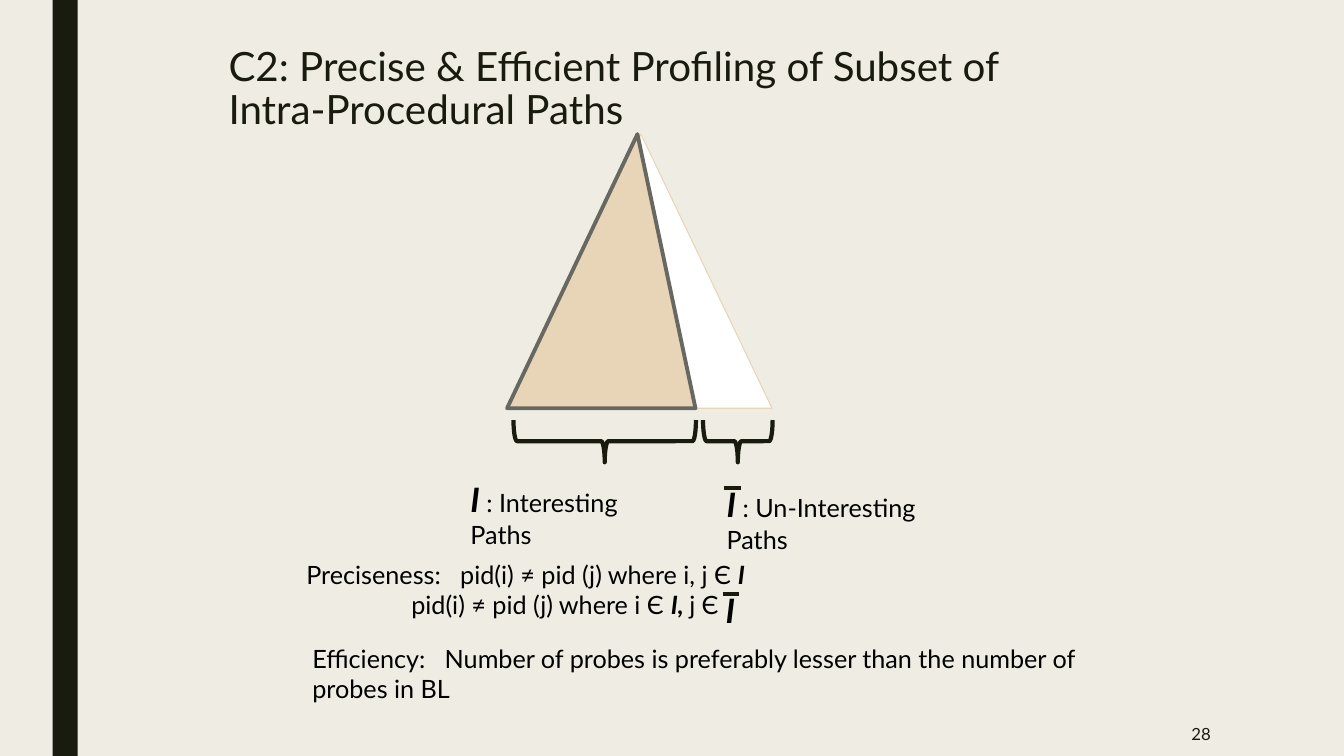
from lxml import etree
from pptx import Presentation
from pptx.dml.color import RGBColor
from pptx.enum.shapes import MSO_CONNECTOR, MSO_SHAPE
from pptx.enum.text import MSO_ANCHOR, PP_ALIGN
from pptx.oxml.ns import qn
from pptx.util import Pt

STRAIGHT = MSO_CONNECTOR.STRAIGHT
RECTANGLE = MSO_SHAPE.RECTANGLE
TRIANGLE = MSO_SHAPE.ISOSCELES_TRIANGLE
LEFT_BRACE = MSO_SHAPE.LEFT_BRACE
MIDDLE = MSO_ANCHOR.MIDDLE
RIGHT = PP_ALIGN.RIGHT

CREAM = RGBColor(0xEF, 0xED, 0xE3)
DARK = RGBColor(0x19, 0x1B, 0x0E)
BLACK = RGBColor(0, 0, 0)
WHITE = RGBColor(0xFF, 0xFF, 0xFF)
TAN = RGBColor(0xE8, 0xD4, 0xB6)
GRAY = RGBColor(0x68, 0x68, 0x63)

FONT = "Lato"
BODY_SIZE = 18
SET_SIZE = 24


def add_shape(shapes, kind, box, fill=None, line=None, weight=0):
    shape = shapes.add_shape(kind, *map(Pt, box))
    shape.shadow.inherit = False
    if fill is None:
        shape.fill.background()
    else:
        shape.fill.solid()
        shape.fill.fore_color.rgb = fill
    if line is None:
        shape.line.fill.background()
    else:
        shape.line.color.rgb = line
        shape.line.width = Pt(weight)
    return shape


def add_text(slide, box, lines, size=BODY_SIZE, color=BLACK, set_size=BODY_SIZE):
    """Each line is a list of (text, is_set_symbol) runs."""
    frame = slide.shapes.add_textbox(*map(Pt, box)).text_frame
    frame.word_wrap = True
    for index, runs in enumerate(lines):
        paragraph = frame.add_paragraph() if index else frame.paragraphs[0]
        paragraph.font.name = FONT
        paragraph.font.size = Pt(size)
        paragraph.font.color.rgb = color
        for text, is_set_symbol in runs:
            run = paragraph.add_run()
            run.text = text
            if is_set_symbol:
                run.font.bold = run.font.italic = True
                run.font.size = Pt(set_size)
    return frame


def add_overline(slide, left, top):
    """Complement bar over the set symbol of a text box at left, top."""
    bar_left, bar_top = left + 5, top + 6.75
    bar = slide.shapes.add_connector(
        STRAIGHT, Pt(bar_left), Pt(bar_top), Pt(bar_left + 12), Pt(bar_top))
    bar.line.color.rgb = DARK
    bar.line.width = Pt(3)
    etree.SubElement(bar._element.spPr, qn("a:effectLst"))


def add_frame(slide, width, height):
    slide.background.fill.solid()
    slide.background.fill.fore_color.rgb = CREAM
    add_shape(slide.shapes, RECTANGLE, (37.5, 0, 18, height), DARK)
    # Page number
    number = add_text(slide, (width - 214, height - 31.5, 126, 31.5),
                      [[("28", False)]], 12, DARK)
    number.vertical_anchor = MIDDLE
    number.paragraphs[0].alignment = RIGHT


def add_title(slide, left, top, width, height):
    title = "C2: Precise & Efficient Profiling of Subset of \vIntra-Procedural Paths"
    frame = add_text(slide, (left, top, width, height), [], 28.8, DARK)
    paragraph = frame.paragraphs[0]
    paragraph.text = title
    paragraph.line_spacing = 0.89
    paragraph.font.name = FONT
    paragraph.font.size = Pt(28.8)
    paragraph.font.color.rgb = DARK


def add_path_triangles(slide, left, top, width, height):
    group = slide.shapes.add_group_shape()
    add_shape(group.shapes, TRIANGLE, (left + 2, top, width - 2, height),
              WHITE, TAN, 0.75)
    interesting = add_shape(group.shapes, TRIANGLE, (left, top, 134.6, height),
                            TAN, GRAY, 2.75)
    interesting.adjustments[0] = 0.692


def add_brace(slide, left, top, width, height):
    """Brace opening upward; the unrotated shape shares the box's centre."""
    center_x, center_y = left + width / 2, top + height / 2
    box = (center_x - height / 2, center_y - width / 2, height, width)
    brace = add_shape(slide.shapes, LEFT_BRACE, box, line=DARK, weight=3)
    brace.rotation = 270


def add_set_label(slide, left, top, width, text, complement=False):
    frame = add_text(slide, (left, top, width, 36),
                     [[("I", True), (text, False)]], set_size=SET_SIZE)
    frame.margin_right = Pt(24)
    if complement:
        add_overline(slide, left, top)


def add_preciseness(slide, left, top, width, height):
    frame = add_text(slide, (left, top, width, height), [
        [("Preciseness:   pid(i) ≠ pid (j) where i, j Є ", False), ("I", True)],
        [("pid(i) ≠ pid (j) where i Є ", False), ("I, ", True), ("j Є", False)],
    ])
    second_line = frame.paragraphs[1]._p.get_or_add_pPr()
    second_line.set("marL", str(Pt(75)))
    second_line.set("indent", "0")
    # Complement symbol that closes the second line
    symbol_left, symbol_top = left + 299.5, top + 21.6
    add_text(slide, (symbol_left, symbol_top, 25, 36), [[("I", True)]],
             set_size=SET_SIZE)
    add_overline(slide, symbol_left, symbol_top)


def add_efficiency(slide, left, top, width, height):
    add_text(slide, (left, top, width, height), [[(
        "Efficiency:   Number of probes is preferably lesser than the number "
        "of probes in BL", False)]])


def main():
    presentation = Presentation()
    presentation.slide_width, presentation.slide_height = Pt(960), Pt(540)
    slide = presentation.slides.add_slide(presentation.slide_layouts[6])

    add_frame(slide, 960, 540)
    add_title(slide, 156.2, 30.2, 648, 45.4)

    # Path sets: triangles, braces and their labels
    add_path_triangles(slide, 362.2, 95.8, 189.3, 195.8)
    add_brace(slide, 366.8, 300, 130.3, 30.2)
    add_brace(slide, 502.2, 300, 49.7, 30.2)
    add_set_label(slide, 329, 338.4, 164, " : Interesting Paths")
    add_set_label(slide, 512, 342, 189.4, " : Un-Interesting Paths", True)

    # Goals
    add_preciseness(slide, 211.7, 396, 365.8, 72.7)
    add_efficiency(slide, 216, 455.8, 581.8, 51)

    presentation.save("out.pptx")


if __name__ == "__main__":
    main()
